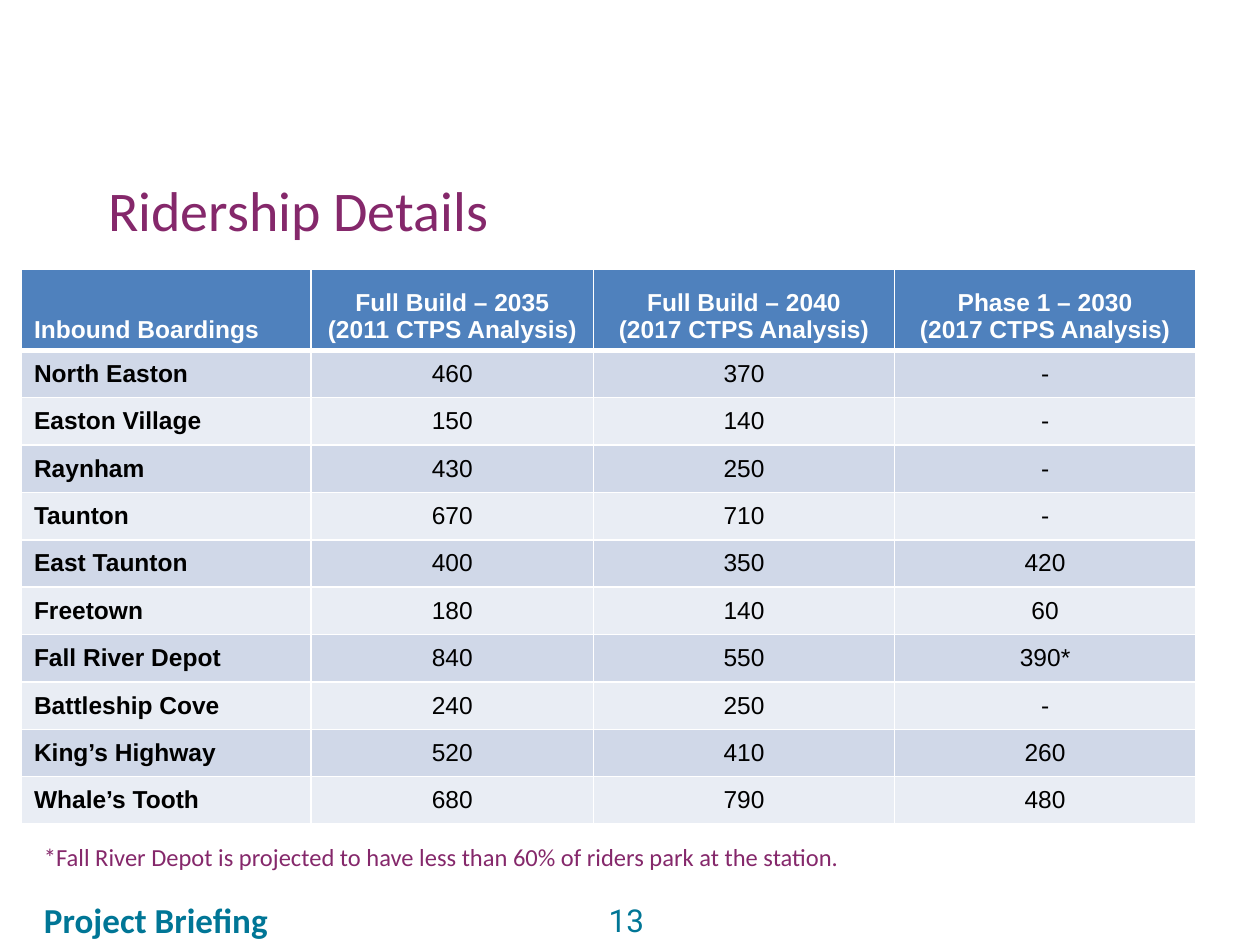
from lxml import etree
from pptx import Presentation
from pptx import util as u
from pptx.dml.color import RGBColor
from pptx.enum import text
from pptx.oxml import ns

COLORS = {
    "white": "FFFFFF",
    "black": "000000",
    "teal": "007696",
    "plum": "85286B",
    "header": "4F81BD",
    "odd": "D0D8E8",
    "even": "E9EDF4",
}
HEADERS = [
    "Inbound Boardings",
    "Full Build – 2035\n(2011 CTPS Analysis)",
    "Full Build – 2040\n(2017 CTPS Analysis)",
    "Phase 1 – 2030\n(2017 CTPS Analysis)",
]
BOARDINGS = [
    ("North Easton", "460", "370", "-"),
    ("Easton Village", "150", "140", "-"),
    ("Raynham", "430", "250", "-"),
    ("Taunton", "670", "710", "-"),
    ("East Taunton", "400", "350", "420"),
    ("Freetown", "180", "140", "60"),
    ("Fall River Depot", "840", "550", "390*"),
    ("Battleship Cove", "240", "250", "-"),
    ("King’s Highway", "520", "410", "260"),
    ("Whale’s Tooth", "680", "790", "480"),
]
COL_WIDTHS = [2.3, 2.24, 2.39, 2.39]
TABLE_HEIGHT = 4.4
HEADER_HEIGHT = 0.64


def rgb(name):
    return RGBColor.from_string(COLORS[name])


def style_text(tf, size, font, color, bold=False, align=text.PP_ALIGN.LEFT):
    for p in tf.paragraphs:
        p.alignment = align
        for r in p.runs:
            r.font.size = u.Pt(size)
            r.font.name = font
            r.font.bold = bold
            r.font.color.rgb = rgb(color)


def add_text(s, box, content, size, color, font="Calibri", **style):
    sp = s.shapes.add_textbox(*[u.Inches(v) for v in box])
    tf = sp.text_frame
    tf.word_wrap = True
    tf.margin_left = tf.margin_right = u.Inches(0.1)
    tf.margin_top = tf.margin_bottom = u.Inches(0.1)
    tf.text = content
    style_text(tf, size, font, color, **style)


def set_borders(cell, widths):
    """Draw white cell borders; widths are points for left, right, top, bottom."""
    tc_pr = cell._tc.get_or_add_tcPr()
    for side, width in zip("LRTB", widths):
        ln = etree.SubElement(tc_pr, ns.qn(f"a:ln{side}"), w=str(u.Pt(width)))
        fill = etree.SubElement(ln, ns.qn("a:solidFill"))
        etree.SubElement(fill, ns.qn("a:srgbClr"), val=COLORS["white"])


def fill_cell(cell, content, row, col):
    is_header = row == 0
    cell.text = content
    align = text.PP_ALIGN.CENTER if col else text.PP_ALIGN.LEFT
    style_text(cell.text_frame, 14, "Arial", "white" if is_header else "black",
               bold=is_header or col == 0, align=align)
    if is_header:
        cell.vertical_anchor = text.MSO_ANCHOR.BOTTOM
        cell.margin_top = 0
    else:
        cell.vertical_anchor = text.MSO_ANCHOR.MIDDLE
    # A heavier rule separates the header from the body
    set_borders(cell, (1, 1, 3 if row == 1 else 1, 3 if is_header else 1))
    cell.fill.solid()
    band = "odd" if row % 2 else "even"
    cell.fill.fore_color.rgb = rgb("header" if is_header else band)


def add_boardings_table(s, left, top):
    rows = [HEADERS, *BOARDINGS]
    frame = s.shapes.add_table(
        len(rows), len(HEADERS), u.Inches(left), u.Inches(top),
        u.Inches(sum(COL_WIDTHS)), u.Inches(TABLE_HEIGHT))
    table = frame.table
    for column, width in zip(table.columns, COL_WIDTHS):
        column.width = u.Inches(width)
    body_height = (TABLE_HEIGHT - HEADER_HEIGHT) / len(BOARDINGS)
    for i, values in enumerate(rows):
        table.rows[i].height = u.Inches(body_height if i else HEADER_HEIGHT)
        for j, value in enumerate(values):
            fill_cell(table.cell(i, j), value, i, j)


def main():
    prs = Presentation()
    prs.slide_width, prs.slide_height = u.Inches(10), u.Inches(7.5)
    s = prs.slides.add_slide(prs.slide_layouts[6])

    # Footer
    add_text(s, (3.83, 7.05, 1.38, 0.41), "13", 18, "teal", "Roboto",
             align=text.PP_ALIGN.RIGHT)
    add_text(s, (0.25, 7.03, 4.08, 0.41), "Project Briefing", 20, "teal", bold=True)

    # Title, table and footnote
    add_text(s, (0.76, 1.29, 8.61, 0.91), "Ridership Details", 32, "plum")
    add_boardings_table(s, 0.17, 2.14)
    add_text(s, (0.25, 6.58, 7.34, 0.5),
             "*Fall River Depot is projected to have less than 60% of riders "
             "park at the station.", 14, "plum")

    prs.save("out.pptx")


if __name__ == "__main__":
    main()
